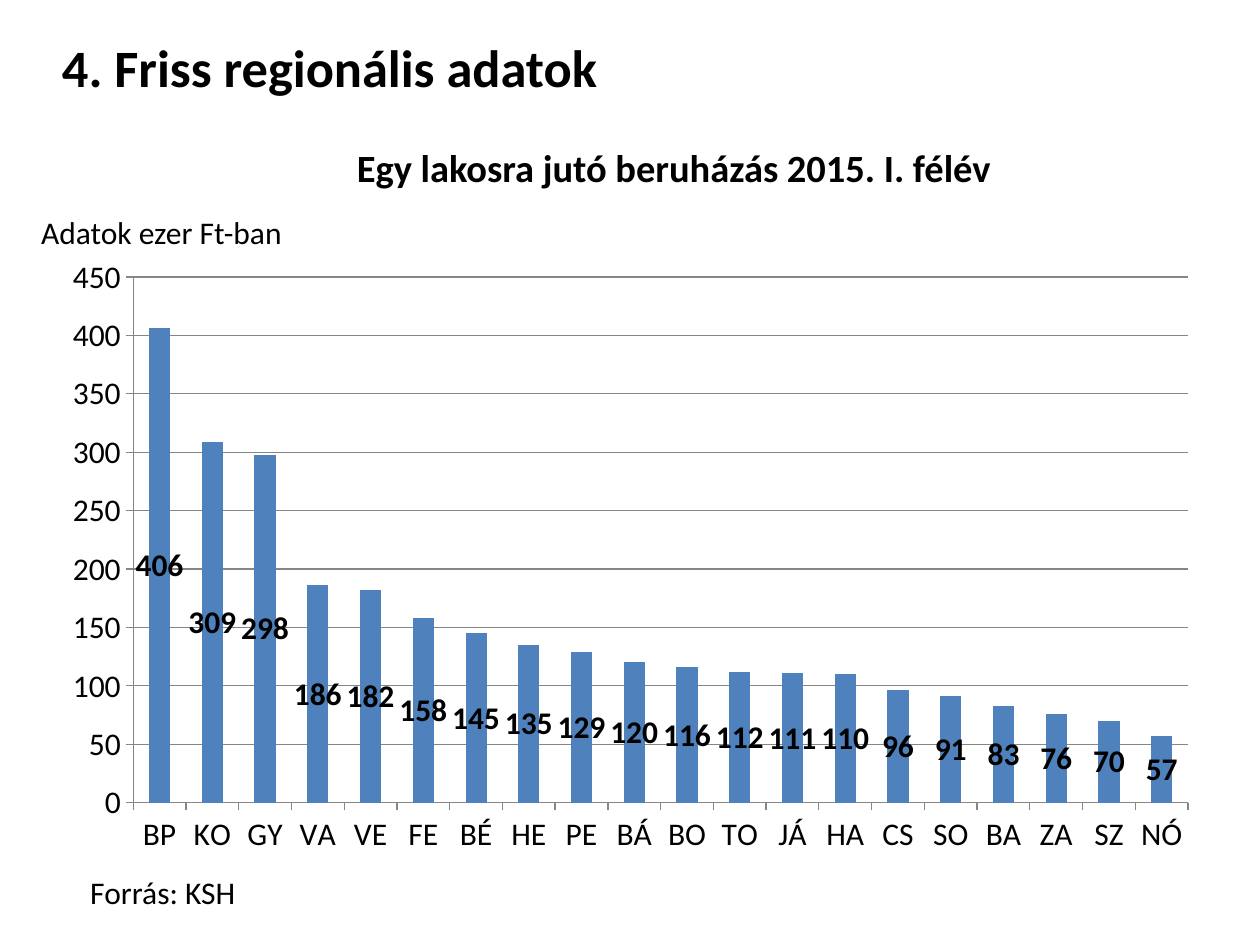
from pptx import Presentation
from pptx.chart.data import CategoryChartData as Data
from pptx.dml.color import RGBColor
from pptx.enum.chart import XL_CHART_TYPE as Kind, XL_LABEL_POSITION as Pos
from pptx.enum.chart import XL_TICK_MARK as Tick
from pptx.enum.text import MSO_AUTO_SIZE as Fit, PP_ALIGN as Align
from pptx.util import Cm, Pt

BLACK = RGBColor(0x00, 0x00, 0x00)
BLUE = RGBColor(0x4F, 0x81, 0xBD)
GREY = RGBColor(0x86, 0x86, 0x86)
FONT = "Calibri"

deck = Presentation()
deck.slide_width, deck.slide_height = Cm(25.4), Cm(19.05)
slide = deck.slides.add_slide(deck.slide_layouts[6])


def style(font, size, bold=False):
    font.name, font.size, font.bold = FONT, Pt(size), bold
    font.color.rgb = BLACK


def label(text, left, top, width, height, size=18, bold=False, align=Align.LEFT):
    box = slide.shapes.add_textbox(Cm(left), Cm(top), Cm(width), Cm(height))
    frame = box.text_frame
    frame.word_wrap = True
    frame.auto_size = Fit.SHAPE_TO_FIT_TEXT
    para = frame.paragraphs[0]
    para.alignment = align
    run = para.add_run()
    run.text = text
    style(run.font, size, bold)


# Investment per head by county
rates = {
    "BP": 406, "KO": 309, "GY": 298, "VA": 186, "VE": 182,
    "FE": 158, "BÉ": 145, "HE": 135, "PE": 129, "BÁ": 120,
    "BO": 116, "TO": 112, "JÁ": 111, "HA": 110, "CS": 96,
    "SO": 91, "BA": 83, "ZA": 76, "SZ": 70, "NÓ": 57,
}
data = Data()
data.categories = list(rates)
data.add_series("Series 1", list(rates.values()))
chart = slide.shapes.add_chart(
    Kind.COLUMN_CLUSTERED, Cm(1), Cm(4.95), Cm(23.42), Cm(12.5), data
).chart
chart.has_legend = False
chart.has_title = False
style(chart.font, 10)

# Columns and their values
plot = chart.plots[0]
plot.gap_width = 150
plot.vary_by_categories = False
bars = plot.series[0]
bars.format.fill.solid()
bars.format.fill.fore_color.rgb = BLUE
bars.invert_if_negative = False
marks = bars.data_labels
marks.show_value = True
marks.position = Pos.CENTER
style(marks.font, 18, bold=True)

# Axes
for axis in (chart.category_axis, chart.value_axis):
    axis.major_tick_mark = Tick.OUTSIDE
    axis.minor_tick_mark = Tick.NONE
    axis.format.line.color.rgb = GREY
    axis.format.line.width = Pt(0.75)
    style(axis.tick_labels.font, 18)
scale = chart.value_axis
scale.minimum_scale, scale.maximum_scale, scale.major_unit = 0, 450, 50
scale.has_major_gridlines = True
scale.major_gridlines.format.line.color.rgb = GREY
scale.major_gridlines.format.line.width = Pt(0.75)

# Headings, unit and source
label("Egy lakosra jutó beruházás 2015. I. félév", 4.95, 2.77, 17.27, 1.19,
      size=22, bold=True, align=Align.CENTER)
label("Adatok ezer Ft-ban", 0.58, 4.17, 6.15, 1.02)
label("Forrás: KSH", 1.57, 17.48, 8.94, 1.02)
label("4. Friss regionális adatok", 1, 0.58, 16.08, 1.55, size=30, bold=True)

deck.save("out.pptx")
